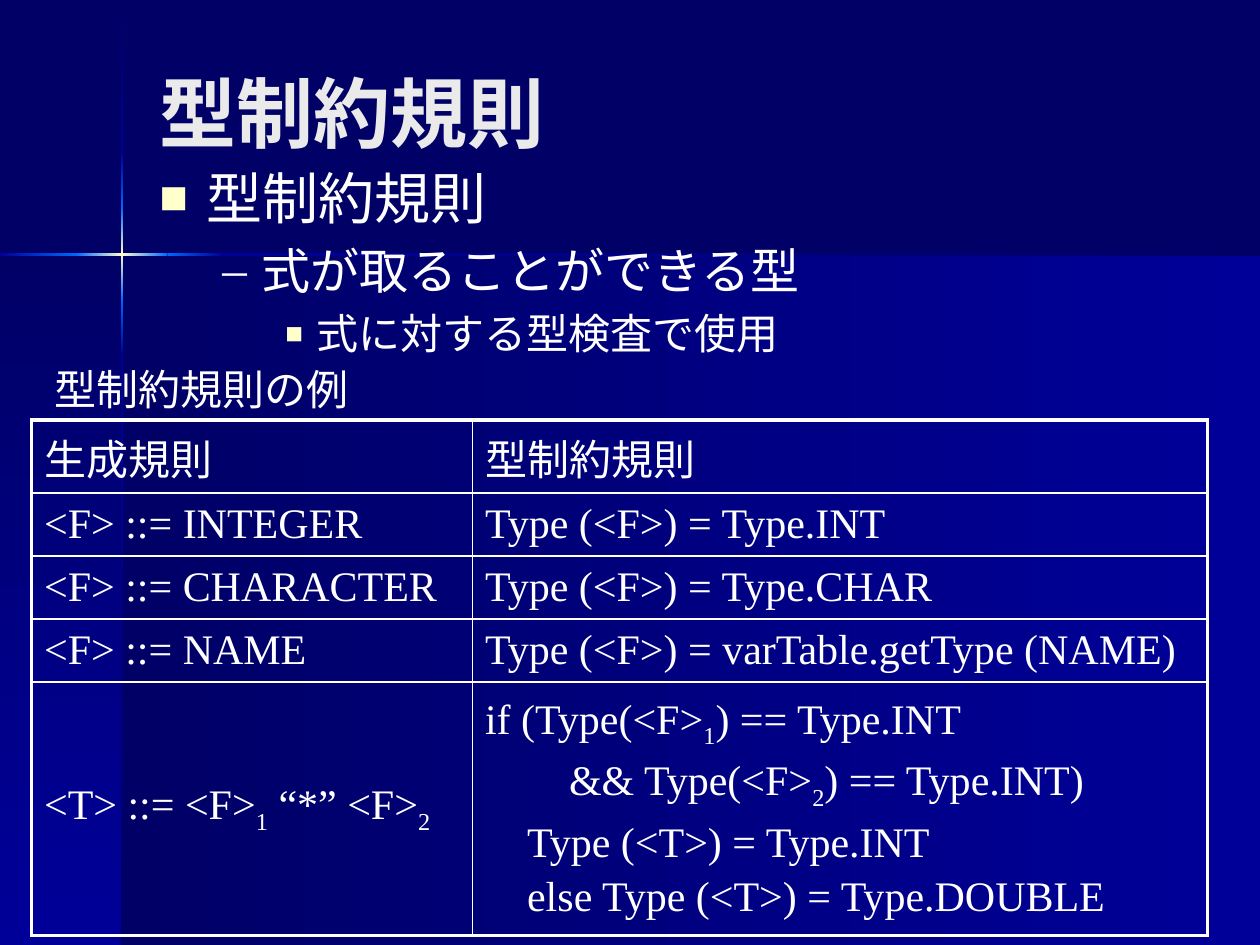
import pptx
import pptx.util
import pptx.dml.color
import pptx.enum.lang
import pptx.enum.shapes
import pptx.enum.text
import pptx.oxml.ns
from lxml import etree

Pt = pptx.util.Pt
qn = pptx.oxml.ns.qn
ANCHOR = pptx.enum.text.MSO_ANCHOR
FONT = "Times New Roman"
HUES = {"night": "000066", "blue": "000099", "glow": "0066FF",
        "cream": "FFFFCC", "title": "EAEAEA", "white": "FFFFFF"}

# Colours along each beam of the star, from its start to its end
BEAMS = [("night", "blue"), ("blue", "glow"), ("glow", "cream", "glow"),
         ("glow", "blue"), ("blue", "night")]
DOWN = [0.7, 87.1, 118.8, 171.4, 203, 540]
ACROSS = [0, 43.6, 95.8, 127.4, 720]

# Text, size, left margin, hanging indent, bullet, bullet colour, bullet size
POINTS = [
    ("型制約規則", 32, 27, 27, "■", "cream", 85),
    ("式が取ることができる型", 28, 58.5, 22.5, "–", "white", 100),
    ("式に対する型検査で使用", 24, 90, 18, "■", "cream", 70),
]

# Each cell is a list of (text, left margin); underscores enclose a subscript
RULES = [
    ([("生成規則", 0)], [("型制約規則", 0)]),
    ([("<F> ::= INTEGER", 0)], [("Type (<F>) = Type.INT", 0)]),
    ([("<F> ::= CHARACTER", 0)], [("Type (<F>) = Type.CHAR", 0)]),
    ([("<F> ::= NAME", 0)], [("Type (<F>) = varTable.getType (NAME)", 0)]),
    ([("<T> ::= <F>_1_ “*” <F>_2_", 0)],
     [("if (Type(<F>_1_) == Type.INT", 0),
      ("&& Type(<F>_2_) == Type.INT)", 48),
      ("Type (<T>) = Type.INT", 24),
      ("else Type (<T>) = Type.DOUBLE", 24)]),
]
WIDTHS = [252, 420]
HEIGHTS = [41.7, 33.7, 33.7, 34, 135.5]


def tint(name):
    return pptx.dml.color.RGBColor.from_string(HUES[name])


def add(parent, tag, **attrs):
    """Append a drawing element to an XML parent."""
    return etree.SubElement(parent, qn(tag), attrs)


def band(slide, left, top, width, height, stops, angle):
    """Draw a rectangle with a gradient; the angle runs clockwise."""
    box = slide.shapes.add_shape(
        pptx.enum.shapes.MSO_SHAPE.RECTANGLE,
        Pt(left), Pt(top), Pt(width), Pt(height))
    box.shadow.inherit = False
    box.line.fill.background()
    box.fill.gradient()
    box.fill.gradient_angle = -angle % 360
    marks = box.element.spPr.find(".//" + qn("a:gsLst"))
    marks.clear()
    for i, name in enumerate(stops):
        mark = add(marks, "a:gs", pos=str(i * 100000 // (len(stops) - 1)))
        add(mark, "a:srgbClr", val=HUES[name])


def style(run, size, hue="white", bold=False):
    font = run.font
    font.name, font.size, font.bold = FONT, Pt(size), bold
    font.color.rgb = tint(hue)
    font.language_id = pptx.enum.lang.MSO_LANGUAGE_ID.JAPANESE


def label(slide, left, top, width, height, text, size, **look):
    box = slide.shapes.add_textbox(Pt(left), Pt(top), Pt(width), Pt(height))
    frame = box.text_frame
    frame.word_wrap = True
    frame.text = text
    style(frame.paragraphs[0].runs[0], size, **look)
    return frame


def bullet(para, size, left, hang, sign, hue, scale):
    para.space_before = Pt(size * 0.2)
    props = para._p.get_or_add_pPr()
    props.set("marL", str(Pt(left)))
    props.set("indent", str(-Pt(hang)))
    add(add(props, "a:buClr"), "a:srgbClr", val=HUES[hue])
    add(props, "a:buSzPct", val=str(scale * 1000))
    add(props, "a:buFont", typeface=FONT)
    add(props, "a:buChar", char=sign)


def points(slide):
    """Write the bulleted list."""
    text = "\n".join(item[0] for item in POINTS)
    frame = label(slide, 84, 90, 594, 132, text, POINTS[0][1])
    for para, (_, size, *look) in zip(frame.paragraphs, POINTS):
        style(para.runs[0], size)
        bullet(para, size, *look)


def border(cell, **sides):
    """Draw cell edges, given as side=width in points."""
    props = cell._tc.get_or_add_tcPr()
    for side, width in sides.items():
        edge = add(props, "a:ln" + side, w=str(Pt(width)))
        add(add(edge, "a:solidFill"), "a:srgbClr", val=HUES["white"])


def write(cell, lines):
    """Fill a cell, with space between its lines only."""
    frame = cell.text_frame
    for i, (text, left) in enumerate(lines):
        para = frame.add_paragraph() if i else frame.paragraphs[0]
        para.space_before = Pt(4.8 if i else 0)
        para._p.get_or_add_pPr().set("marL", str(Pt(left)))
        for j, part in enumerate(text.split("_")):
            if not part:
                continue
            run = para.add_run()
            run.text = part
            style(run, 24)
            if j % 2:
                run._r.get_or_add_rPr().set("baseline", "-25000")


def grid(slide):
    rows, cols = len(RULES), len(WIDTHS)
    table = slide.shapes.add_table(
        rows, cols, Pt(18), Pt(240), Pt(sum(WIDTHS)), Pt(sum(HEIGHTS))).table
    table.first_row = table.horz_banding = False
    for col, width in zip(table.columns, WIDTHS):
        col.width = Pt(width)
    for row, height in zip(table.rows, HEIGHTS):
        row.height = Pt(height)
    for r, rule in enumerate(RULES):
        for c, lines in enumerate(rule):
            cell = table.cell(r, c)
            cell.vertical_anchor = ANCHOR.MIDDLE
            outer = {"L": c == 0, "R": c == cols - 1,
                     "T": r == 0, "B": r == rows - 1}
            border(cell, **{k: 2.25 if v else 1 for k, v in outer.items()})
            cell.fill.background()
            write(cell, lines)


def backdrop(slide):
    slide.background.fill.solid()
    slide.background.fill.fore_color.rgb = tint("night")
    band(slide, 70, 145.5, 650, 394.5, ("night", "blue"), 0)
    band(slide, 0, 145.5, 70, 394.5, ("night", "blue"), 90)
    for top, end, stops in zip(DOWN, DOWN[1:], BEAMS):
        band(slide, 69.1, top, 1.4, end - top, stops, 90)
    for left, end, stops in zip(ACROSS, ACROSS[1:], BEAMS[1:]):
        band(slide, left, 144.7, end - left, 1.4, stops, 0)


def main():
    deck = pptx.Presentation()
    deck.slide_width, deck.slide_height = Pt(720), Pt(540)
    slide = deck.slides.add_slide(deck.slide_layouts[6])
    backdrop(slide)
    title = label(slide, 84, 15.5, 588, 78, "型制約規則", 44,
                  hue="title", bold=True)
    title.vertical_anchor = ANCHOR.BOTTOM
    points(slide)
    grid(slide)
    label(slide, 24, 204, 192, 36, "型制約規則の例", 24)
    deck.save("out.pptx")


if __name__ == "__main__":
    main()
